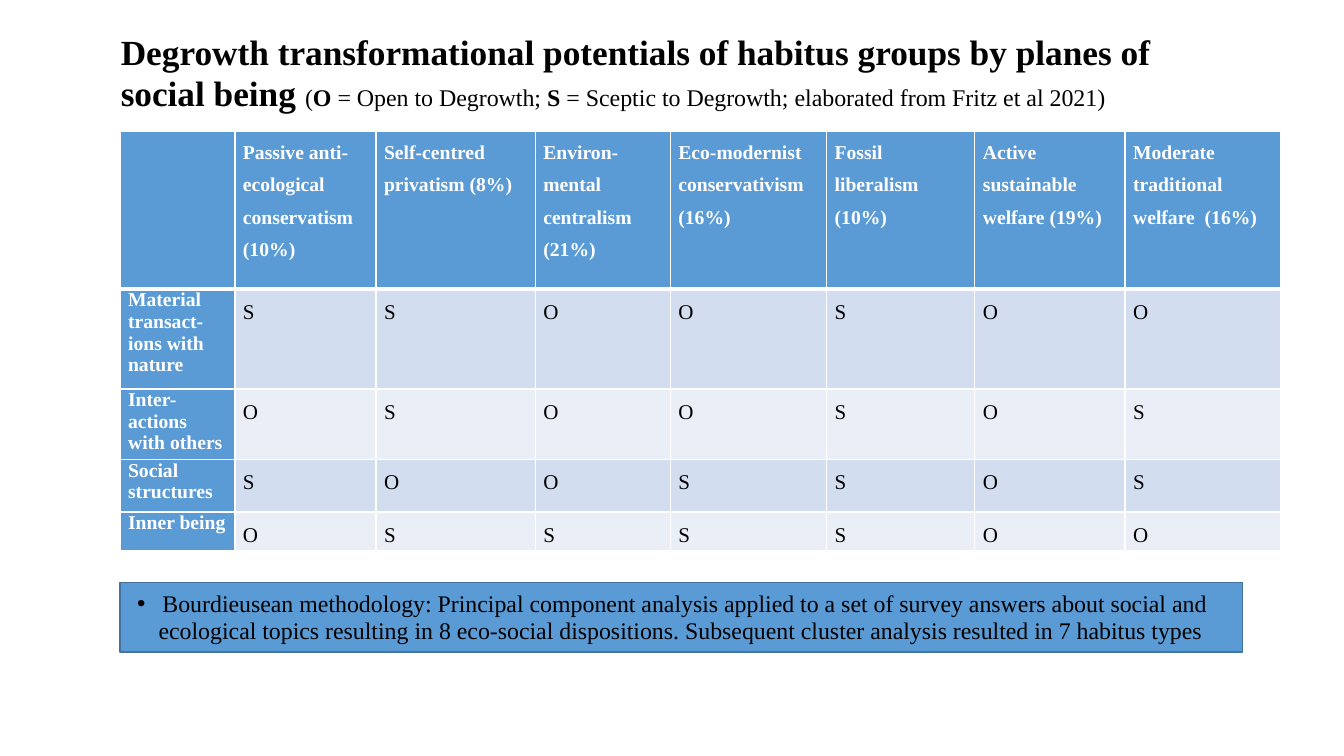
from lxml import etree
from pptx import Presentation
from pptx.dml.color import RGBColor
from pptx.enum.shapes import MSO_SHAPE
from pptx.enum.text import MSO_ANCHOR, PP_ALIGN
from pptx.oxml.ns import qn
from pptx.util import Inches, Pt

RECTANGLE = MSO_SHAPE.RECTANGLE
TOP, MIDDLE = MSO_ANCHOR.TOP, MSO_ANCHOR.MIDDLE
LEFT, CENTER = PP_ALIGN.LEFT, PP_ALIGN.CENTER

FONT = "Times New Roman"
COLORS = {
    "text": "000000",
    "white": "FFFFFF",
    "accent": "5B9BD5",
    "outline": "43739E",
    "odd_row": "D2DEEF",
    "even_row": "EAEFF7",
}
SLIDE_WIDTH, SLIDE_HEIGHT = Inches(13.33), Inches(7.5)

# Shares of the slide, in percent of its width or height
MARGIN = 8.93
COLUMN_SHARES = [8.55, 10.5, 11.85, 10.05, 11.63, 11.03, 11.18, 11.55]
ROW_SHARES = [20.93, 13.2, 6.93, 6.93, 5.07]

TITLE_RUNS = [
    ("Degrowth transformational potentials of habitus groups by planes of social being ", 25.2, True),
    ("(", 17.1, False),
    ("O", 17.1, True),
    (" = Open to Degrowth;", 17.1, False),
    (" S", 17.1, True),
    (" = Sceptic to Degrowth; elaborated from Fritz et al 2021)", 17.1, False),
]
HABITUS_GROUPS = [
    "Passive anti-ecological conservatism (10%)",
    "Self-centred privatism (8%)",
    "Environ-mental centralism (21%)",
    "Eco-modernist conservativism (16%)",
    "Fossil liberalism (10%)",
    "Active sustainable welfare (19%)",
    "Moderate traditional welfare  (16%)",
]
PLANES = [
    ("Material transact-ions with nature", "SSOOSOO"),
    ("Inter-actions with others", "OSOOSOS"),
    ("Social structures", "SOOSSOS"),
    ("Inner being", "OSSSSOO"),
]
METHOD_NOTE = (
    "Bourdieusean methodology: Principal component analysis applied to a set of "
    "survey answers about social and ecological topics resulting in 8 eco-social "
    "dispositions. Subsequent cluster analysis resulted in 7 habitus types"
)


def across(percent):
    return round(SLIDE_WIDTH * percent / 100)


def down(percent):
    return round(SLIDE_HEIGHT * percent / 100)


def color(name):
    return RGBColor.from_string(COLORS[name])


def format_run(run, size, color_name, bold=False):
    run.font.name = FONT
    run.font.size = Pt(size)
    run.font.bold = bold
    run.font.color.rgb = color(color_name)


def add_title(slide):
    box = slide.shapes.add_textbox(across(8.25), down(3.73), across(83.5), down(12))
    frame = box.text_frame
    frame.word_wrap = True
    frame.vertical_anchor = TOP
    paragraph = frame.paragraphs[0]
    paragraph.alignment = LEFT
    paragraph.line_spacing = 0.96
    for text, size, bold in TITLE_RUNS:
        run = paragraph.add_run()
        run.text = text
        format_run(run, size, "text", bold)


def set_borders(cell, top_width, bottom_width):
    """Draw white lines around a cell; widths are in points."""
    properties = cell._tc.get_or_add_tcPr()
    widths = {"a:lnL": 1, "a:lnR": 1, "a:lnT": top_width, "a:lnB": bottom_width}
    for position, (tag, width) in enumerate(widths.items()):
        line = etree.Element(qn(tag), w=str(Pt(width)))
        fill = etree.SubElement(line, qn("a:solidFill"))
        etree.SubElement(fill, qn("a:srgbClr"), val=COLORS["white"])
        properties.insert(position, line)


def fill_cell(cell, text, row, column):
    is_label = row == 0 or column == 0
    band = "odd_row" if row % 2 else "even_row"
    cell.fill.solid()
    cell.fill.fore_color.rgb = color("accent" if is_label else band)
    cell.margin_left = cell.margin_right = Inches(0.08)
    cell.margin_top = cell.margin_bottom = 0
    set_borders(cell, 3 if row == 1 else 1, 3 if row == 0 else 1)
    cell.text_frame.text = text
    paragraph = cell.text_frame.paragraphs[0]
    if column > 0:
        paragraph.line_spacing = 1.5
        paragraph.space_after = Pt(10)
    for run in paragraph.runs:
        format_run(run, 14 if is_label else 15, "white" if is_label else "text", is_label)


def add_habitus_table(slide):
    contents = [["", *HABITUS_GROUPS]] + [[plane, *ratings] for plane, ratings in PLANES]
    table = slide.shapes.add_table(
        len(ROW_SHARES), len(COLUMN_SHARES), across(MARGIN), down(17.33),
        across(sum(COLUMN_SHARES)), down(sum(ROW_SHARES)),
    ).table
    for column, share in zip(table.columns, COLUMN_SHARES):
        column.width = across(share)
    for row, share in zip(table.rows, ROW_SHARES):
        row.height = down(share)
    for row, texts in enumerate(contents):
        for column, text in enumerate(texts):
            fill_cell(table.cell(row, column), text, row, column)


def add_bullet(paragraph):
    properties = paragraph._p.get_or_add_pPr()
    properties.set("marL", "0")
    properties.set("indent", str(-Inches(0.25)))
    etree.SubElement(properties, qn("a:buFont"), typeface="Arial")
    etree.SubElement(properties, qn("a:buChar"), char="•")


def add_method_note(slide):
    shape = slide.shapes.add_shape(
        RECTANGLE, across(MARGIN), down(77.07), across(83.5), down(9.2))
    shape.shadow.inherit = False
    shape.fill.solid()
    shape.fill.fore_color.rgb = color("accent")
    shape.line.color.rgb = color("outline")
    shape.line.width = Pt(1)
    frame = shape.text_frame
    frame.word_wrap = True
    frame.vertical_anchor = MIDDLE
    frame.text = METHOD_NOTE
    paragraph = frame.paragraphs[0]
    paragraph.alignment = CENTER
    paragraph.line_spacing = 0.95
    paragraph.space_after = Pt(6)
    add_bullet(paragraph)
    format_run(paragraph.runs[0], 17, "text")


def main():
    presentation = Presentation()
    presentation.slide_width = SLIDE_WIDTH
    presentation.slide_height = SLIDE_HEIGHT
    slide = presentation.slides.add_slide(presentation.slide_layouts[6])
    add_title(slide)
    add_method_note(slide)
    add_habitus_table(slide)
    presentation.save("out.pptx")


if __name__ == "__main__":
    main()
